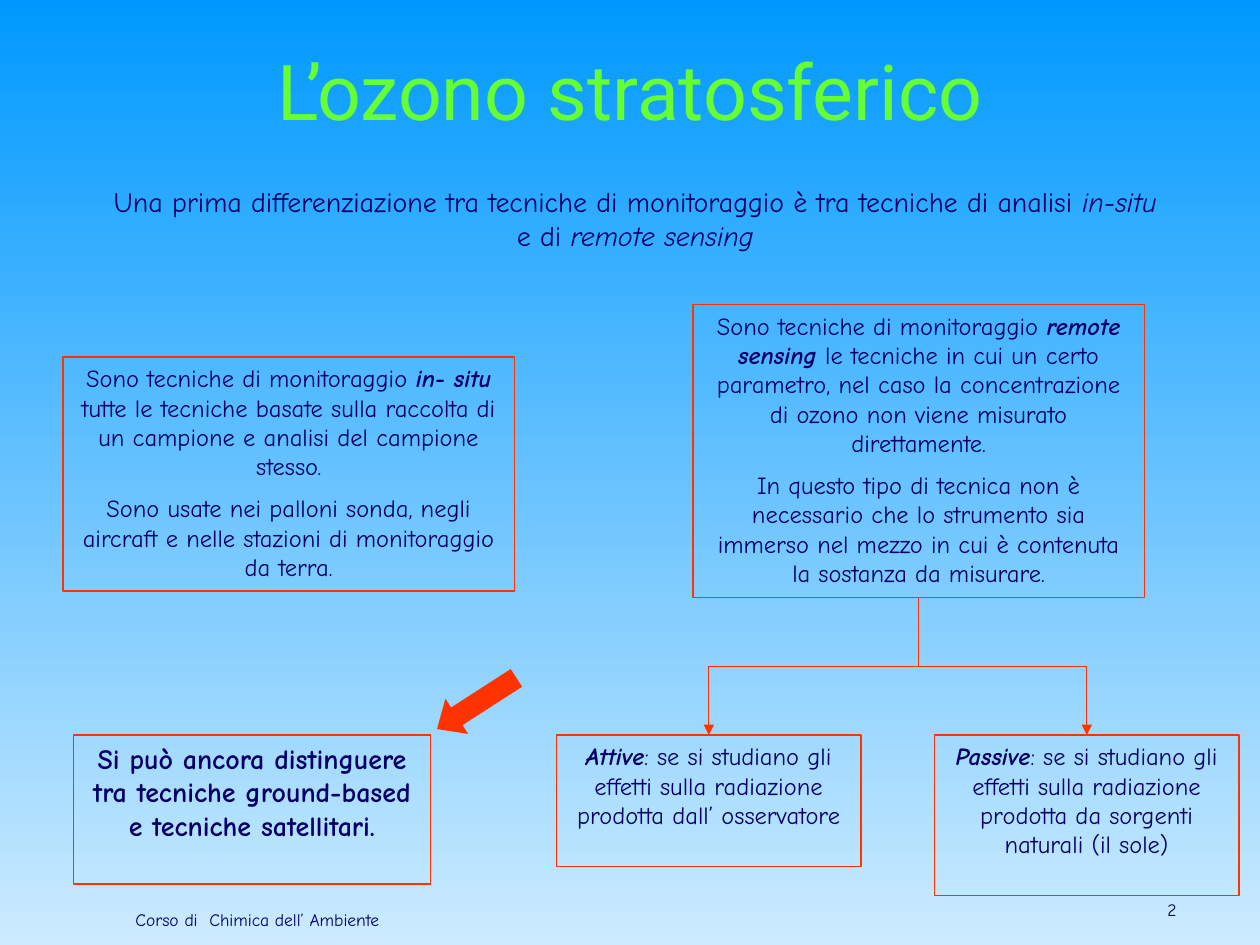
import collections

import lxml.etree
import pptx
import pptx.dml.color
import pptx.enum.shapes
import pptx.enum.text
import pptx.oxml.ns
import pptx.util

COLORS = {
    "sky_top": "0099FF",
    "sky_bottom": "CCEBFF",
    "title": "66FF33",
    "text": "000066",
    "accent": "FF3300",
}
TITLE_FONT, BODY_FONT = "Roboto", "Comic Neue"
CELL = pptx.util.Inches(10) / 120
CENTER = pptx.enum.text.PP_ALIGN.CENTER
RIGHT = pptx.enum.text.PP_ALIGN.RIGHT

Box = collections.namedtuple("Box", "col row cols rows")


def rgb(name):
    return pptx.dml.color.RGBColor.from_string(COLORS[name])


def grid(*cells):
    return [round(cell * CELL) for cell in cells]


def paint_background(slide):
    fill = slide.background.fill
    fill.gradient()
    fill.gradient_angle = 270
    for stop, name in zip(fill.gradient_stops, ("sky_top", "sky_bottom")):
        stop.color.rgb = rgb(name)


def write(frame, paragraphs, size, align=CENTER, font=BODY_FONT, color="text",
          anchor=pptx.enum.text.MSO_ANCHOR.TOP):
    frame.word_wrap = True
    frame.auto_size = pptx.enum.text.MSO_AUTO_SIZE.NONE
    frame.vertical_anchor = anchor
    for index, runs in enumerate(paragraphs):
        paragraph = frame.add_paragraph() if index else frame.paragraphs[0]
        paragraph.alignment = align
        paragraph.space_before = pptx.util.Pt(7 if index else 0)
        paragraph.font.size = pptx.util.Pt(size)
        paragraph.font.name = font
        paragraph.font.color.rgb = rgb(color)
        for text, style in runs:
            run = paragraph.add_run()
            run.text = text
            if "b" in style:
                run.font.bold = True
            if "i" in style:
                run.font.italic = True


def place_title(slide, box, text):
    title = slide.shapes.title
    title.left, title.top, title.width, title.height = grid(*box)
    write(title.text_frame, [[(text, "")]], 44, font=TITLE_FONT, color="title",
          anchor=pptx.enum.text.MSO_ANCHOR.MIDDLE)


def place_text(slide, box, runs, size, align=CENTER):
    write(slide.shapes.add_textbox(*grid(*box)).text_frame, [runs], size, align)


def place_card(slide, box, paragraphs, size=14):
    card = slide.shapes.add_shape(
        pptx.enum.shapes.MSO_SHAPE.RECTANGLE, *grid(*box))
    card.shadow.inherit = False
    card.fill.background()
    card.line.color.rgb = rgb("accent")
    card.line.width = pptx.util.Pt(0.75)
    write(card.text_frame, paragraphs, size)


def place_branch(slide, parent, child):
    start, end = parent.col + parent.cols / 2, child.col + child.cols / 2
    top = parent.row + parent.rows
    drop, span = child.row - top, abs(end - start)
    left = (start + end - drop) / 2
    upper = (top + child.row - span) / 2
    branch = slide.shapes.add_connector(
        pptx.enum.shapes.MSO_CONNECTOR.ELBOW,
        *grid(left, upper, left + drop, upper + span))
    branch.line.color.rgb = rgb("accent")
    branch.line.width = pptx.util.Pt(0.75)
    properties = branch._element.spPr
    properties.xfrm.set("rot", str((90 if end < start else 270) * 60000))
    if end > start:
        properties.xfrm.set("flipH", "1")
    qn = pptx.oxml.ns.qn
    lxml.etree.SubElement(
        properties.find(qn("a:ln")), qn("a:tailEnd"), type="triangle")
    lxml.etree.SubElement(properties, qn("a:effectLst"))


def place_pointer(slide, box):
    pointer = slide.shapes.add_shape(
        pptx.enum.shapes.MSO_SHAPE.DOWN_ARROW, *grid(*box))
    pointer.shadow.inherit = False
    pointer.adjustments[0], pointer.adjustments[1] = 0.5, 0.56
    pointer.rotation = 57.2
    pointer.fill.solid()
    pointer.fill.fore_color.rgb = rgb("accent")
    pointer.line.fill.background()


def place_remote_sensing(slide, definition, active, passive):
    place_card(slide, definition, [
        [("Sono tecniche di monitoraggio ", ""),
         ("remote sensing ", "bi"),
         ("le tecniche in cui un certo parametro, nel caso la concentrazione "
          "di ozono non viene misurato direttamente.", "")],
        [("In questo tipo di tecnica non è necessario che lo strumento sia "
          "immerso nel mezzo in cui è contenuta la sostanza da misurare.", "")],
    ])
    kinds = [
        (active, "Attive", "prodotta dall’ osservatore"),
        (passive, "Passive", "prodotta da sorgenti naturali (il sole)"),
    ]
    for box, kind, origin in kinds:
        effects = f": se si studiano gli effetti sulla radiazione {origin}"
        place_card(slide, box, [[(kind, "bi"), (effects, "")]])
        place_branch(slide, definition, box)


def place_in_situ(slide, definition, pointer, platforms):
    place_card(slide, definition, [
        [("Sono tecniche di monitoraggio ", ""),
         ("in- situ", "bi"),
         (" tutte le tecniche basate sulla raccolta di un campione e analisi "
          "del campione stesso.", "")],
        [("Sono usate nei palloni sonda, negli aircraft e nelle stazioni di "
          "monitoraggio da terra.", "")],
    ])
    place_pointer(slide, pointer)
    place_card(slide, platforms, [
        [("Si può ancora distinguere tra tecniche ground-based e tecniche "
          "satellitari.", "b")],
    ], size=16)


def main():
    deck = pptx.Presentation()
    deck.slide_width, deck.slide_height = grid(120, 90)
    slide = deck.slides.add_slide(deck.slide_layouts[5])
    paint_background(slide)
    place_title(slide, Box(19.8, 3, 80.5, 11), "L’ozono stratosferico")
    place_text(slide, Box(9, 17, 103, 7.7), [
        ("Una prima differenziazione tra tecniche di monitoraggio è tra "
         "tecniche di analisi ", ""),
        ("in-situ", "i"), (" e di ", ""), ("remote sensing", "i"),
    ], 16)
    place_in_situ(slide, Box(6, 34, 43, 22.3), Box(43.4, 62.5, 4, 9),
                  Box(7, 70, 34, 14.2))
    place_remote_sensing(slide, Box(66, 29, 43, 27.9), Box(53, 70, 29, 12.5),
                         Box(89, 70, 29, 15.3))
    place_text(slide, Box(110, 85, 3, 4), [("2", "")], 10, RIGHT)
    place_text(slide, Box(6, 86, 37, 4),
               [("Corso di  Chimica dell’ Ambiente", "")], 10)
    deck.save("out.pptx")


if __name__ == "__main__":
    main()
